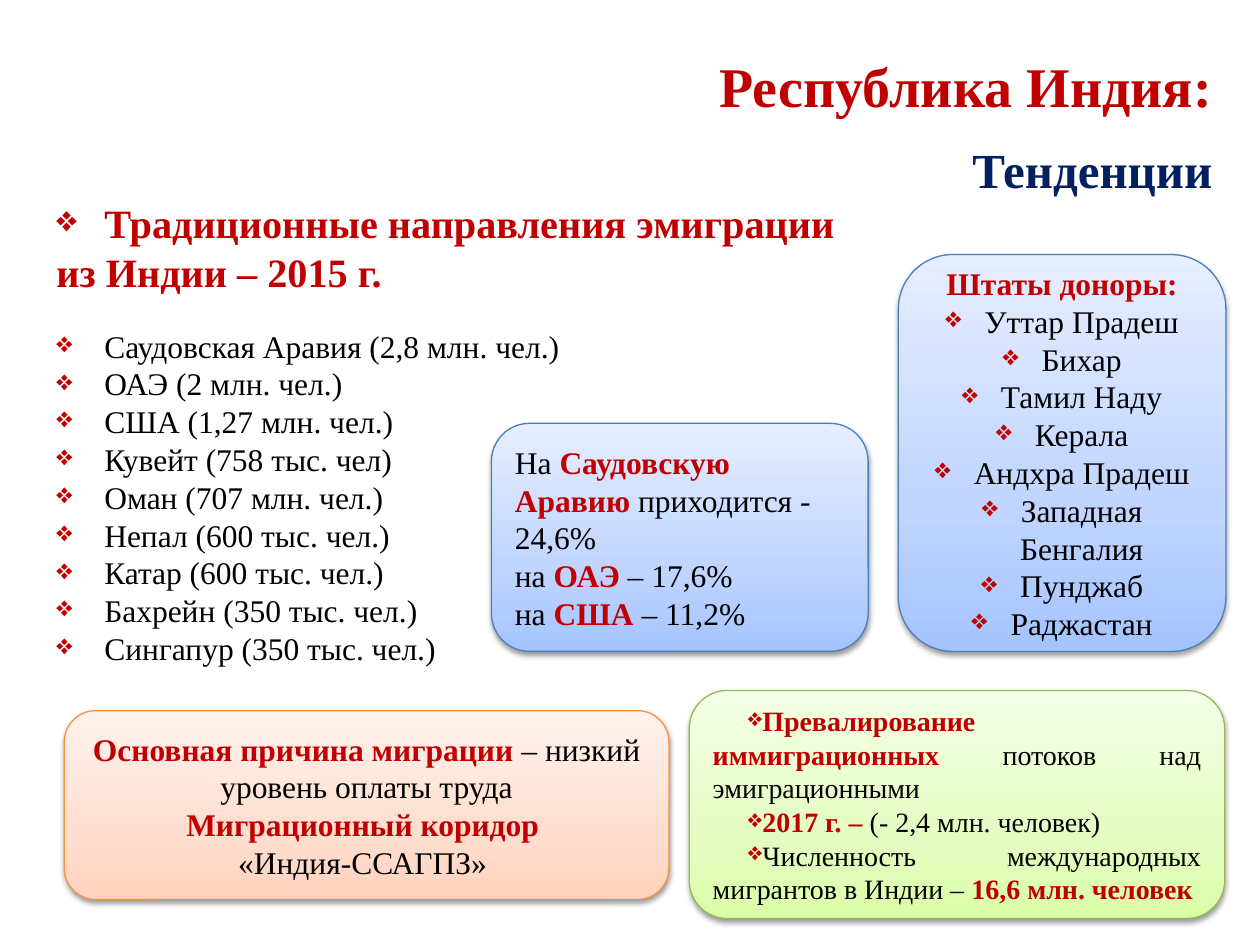
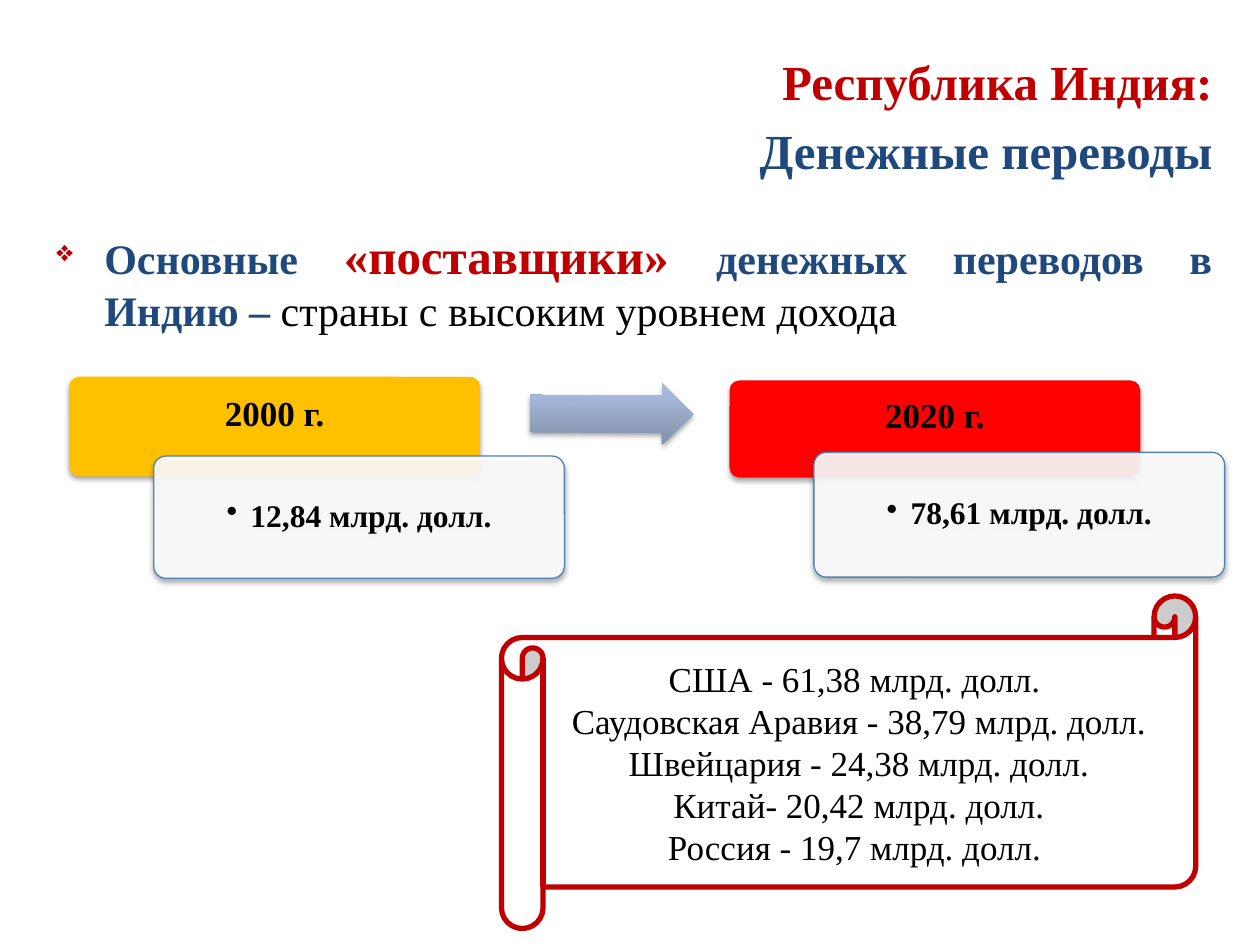
"""Build two slides on migration trends and remittances of India."""
from lxml import etree
from pptx import Presentation
from pptx import util as u
from pptx.dml.color import RGBColor
from pptx.enum import shapes, text
from pptx.oxml import ns

FONT = "Times New Roman"
COLORS = {
    "accent": "C00000", "navy": "002060", "blue": "1F497D", "black": "000000",
    "white": "FFFFFF", "amber": "FFC000", "red": "FF0000", "edge": "4F81BD",
}
CARDS = {
    "blue": ([(0, "A4C4FF"), (35, "BFD4FF"), (100, "E6EEFF")], "4B7EBC"),
    "orange": ([(0, "FFD2BD"), (35, "FFDED0"), (100, "FFF2ED")], "F69240"),
    "green": ([(0, "DAFDA7"), (35, "E4FCC2"), (100, "F5FFE7")], "98B955"),
}
ARROW_STOPS = [(0, "818FA8"), (80, "A7B9DA"), (100, "A7BADC")]
LEFT, CENTER = text.PP_ALIGN.LEFT, text.PP_ALIGN.CENTER
RIGHT, JUSTIFY = text.PP_ALIGN.RIGHT, text.PP_ALIGN.JUSTIFY
SHAPE = shapes.MSO_SHAPE


def add_xml(parent, tag, **attrs):
    return etree.SubElement(parent, ns.qn(tag), {k: str(v) for k, v in attrs.items()})


def marked(line):
    """Split a line at asterisks into plain and accented bold runs."""
    return [(part, "accent" if i % 2 else "black", bool(i % 2), None)
            for i, part in enumerate(line.split("*")) if part]


class Deck:
    """Holds the style and the current slide."""

    def __init__(self):
        self.prs = Presentation()
        self.prs.slide_width, self.prs.slide_height = u.Inches(10), u.Inches(7.5)
        self.s = None

    def slide(self):
        self.s = self.prs.slides.add_slide(self.prs.slide_layouts[6])

    def style(self, font, color, bold, size):
        font.color.rgb = RGBColor.from_string(COLORS[color])
        font.bold = bold
        if size:
            font.size = u.Pt(size)

    def bullet(self, p, indent, pct):
        pPr = p._p.get_or_add_pPr()
        margin, first = indent
        pPr.set("marL", str(u.Inches(margin)))
        pPr.set("indent", str(u.Inches(first)))
        if pct:
            clr = add_xml(pPr, "a:buClr")
            add_xml(clr, "a:srgbClr", val=COLORS["accent"])
            add_xml(pPr, "a:buSzPct", val=pct * 1000)
        add_xml(pPr, "a:buChar", char="❖" if pct else "•")

    def para(self, tf, runs, size, align=LEFT, indent=None, pct=90, before=0, spacing=None):
        p = tf.paragraphs[0]
        if p.runs:
            p = tf.add_paragraph()
        p.alignment = align
        p.space_before = u.Pt(before)
        if spacing:
            p.line_spacing = spacing
        if indent:
            self.bullet(p, indent, pct)
        p.font.name, p.font.size = FONT, u.Pt(size)
        for words, *look in runs:
            r = p.add_run()
            r.text = words
            self.style(p.font if len(runs) == 1 else r.font, *look)

    def lines(self, tf, lines, size, **kw):
        for line in lines:
            self.para(tf, marked(line), size, **kw)

    def body(self, height):
        tf = self.s.shapes.add_textbox(
            u.Inches(0.35), u.Inches(0.36), u.Inches(9.37), u.Inches(height)).text_frame
        tf.word_wrap = True
        return tf

    def title(self, tf, heading, size, subject, color, before):
        self.para(tf, [(heading, "accent", True, None)], size, RIGHT)
        self.para(tf, [(subject, color, True, None)], 28, RIGHT, before=before)

    def gradient(self, sp, stops):
        sp.fill.gradient()
        sp.fill.gradient_angle = 90
        gs_list = sp._element.spPr.find(".//" + ns.qn("a:gsLst"))
        gs_list.clear()
        for pos, color in stops:
            gs = add_xml(gs_list, "a:gs", pos=pos * 1000)
            add_xml(gs, "a:srgbClr", val=color)

    def shadow(self, sp, alpha, dist):
        effects = sp._element.spPr.find(ns.qn("a:effectLst"))
        outer = add_xml(effects, "a:outerShdw", blurRad=u.Pt(3.1), dist=u.Pt(dist),
                        dir=5400000, rotWithShape=0)
        clr = add_xml(outer, "a:srgbClr", val=COLORS["black"])
        add_xml(clr, "a:alpha", val=alpha * 1000)

    def shape(self, kind, at, fill, line=None, width=0.75, opacity=None):
        sp = self.s.shapes.add_shape(kind, *map(u.Inches, at))
        sp.shadow.inherit = False
        if isinstance(fill, list):
            self.gradient(sp, fill)
        else:
            sp.fill.solid()
            sp.fill.fore_color.rgb = RGBColor.from_string(fill)
        if opacity:
            clr = sp._element.spPr.find(ns.qn("a:solidFill"))[0]
            add_xml(clr, "a:alpha", val=opacity * 1000)
        if line:
            sp.line.color.rgb = RGBColor.from_string(line)
            sp.line.width = u.Pt(width)
        else:
            sp.line.fill.background()
        sp.text_frame.word_wrap = True
        sp.text_frame.vertical_anchor = text.MSO_ANCHOR.MIDDLE
        return sp

    def card(self, at, palette):
        sp = self.shape(SHAPE.ROUNDED_RECTANGLE, at, *CARDS[palette])
        self.shadow(sp, 38, 1.6)
        return sp.text_frame

    def panel(self, at, words, size, fill, line=None, opacity=None, indent=None, lift=0):
        sp = self.shape(SHAPE.ROUNDED_RECTANGLE, at, fill, line, opacity=opacity)
        sp.adjustments[0] = 0.1
        self.shadow(sp, 35, 1.8)
        tf = sp.text_frame
        tf.margin_top, tf.margin_bottom = u.Inches(0.05), u.Inches(0.05 + lift)
        self.para(tf, [(words, "black", True, None)], size, CENTER, indent, pct=None,
                  spacing=0.9)

    def year(self, left, top, height, year, color, sum_top, sum_height, amount):
        self.panel((left, top, 3.26, height), year, 20, COLORS[color], lift=0.18)
        self.panel((left + 0.67, sum_top, 3.26, sum_height), amount, 18, COLORS["white"],
                   COLORS["edge"], opacity=90, indent=(0.19, -0.19))


def trends(d):
    d.slide()
    hang = (0.38, -0.38)
    tf = d.body(6.93)
    d.title(tf, "Республика Индия:", 32, "Тенденции", "navy", 12)
    d.lines(tf, ["*Традиционные направления эмиграции*"], 23, indent=hang)
    d.lines(tf, ["*из Индии – 2015 г.*"], 23)
    countries = ["Саудовская Аравия (2,8 млн. чел.)", "ОАЭ (2 млн. чел.)",
                 "США (1,27 млн. чел.)", "Кувейт (758 тыс. чел)",
                 "Оман (707 млн. чел.)", "Непал (600 тыс. чел.)",
                 "Катар (600 тыс. чел.)", "Бахрейн (350 тыс. чел.)",
                 "Сингапур (350 тыс. чел.)"]
    d.lines(tf, countries[:1], 18, indent=hang, before=18)
    d.lines(tf, countries[1:], 18, indent=hang)

    shares = d.card((3.9, 3.36, 2.99, 1.81), "blue")
    d.lines(shares, ["На *Саудовскую Аравию *приходится - 24,6%",
                     "на *ОАЭ* – 17,6%", "на *США* – 11,2%"], 18)

    donors = d.card((7.13, 2.02, 2.6, 3.15), "blue")
    d.lines(donors, ["*Штаты доноры:*"], 18, align=CENTER)
    d.lines(donors, ["Уттар Прадеш", "Бихар", "Тамил Наду", "Керала", "Андхра Прадеш",
                     "Западная Бенгалия", "Пунджаб", "Раджастан"], 18,
            align=CENTER, indent=(0.31, -0.31))

    cause = d.card((0.51, 5.64, 4.8, 1.5), "orange")
    d.lines(cause, ["*Основная причина миграции *– низкий уровень оплаты труда",
                    "*Миграционный коридор *", "«Индия-ССАГПЗ» "], 18, align=CENTER)

    balance = d.card((5.47, 5.48, 4.25, 1.81), "green")
    d.lines(balance, ["*Превалирование иммиграционных *потоков над эмиграционными",
                      "*2017 г. – *(- 2,4 млн. человек)",
                      "Численность международных мигрантов в Индии – *16,6 млн. человек*"],
            16, align=JUSTIFY, indent=(0, 0.28))


def remittances(d):
    d.slide()
    tf = d.body(6.85)
    d.title(tf, "Республика Индия:", 28, "Денежные переводы", "blue", 5.6)
    d.para(tf, [("Основные ", "blue", True, None),
                ("«поставщики» ", "accent", True, 28),
                ("денежных переводов в Индию – ", "blue", True, None),
                ("страны с высоким уровнем дохода", "black", False, None)],
           24, JUSTIFY, (0.38, -0.38), pct=70, before=26.4)

    d.year(0.55, 2.99, 0.79, "2000 г.", "amber", 3.62, 0.97, "12,84 млрд. долл.")
    arrow = d.shape(SHAPE.RIGHT_ARROW, (4.21, 3.04, 1.29, 0.49), ARROW_STOPS)
    arrow.adjustments[0] = 0.6
    arrow.rotation = 0.3
    d.shadow(arrow, 35, 1.8)
    d.year(5.79, 3.02, 0.77, "2020 г.", "red", 3.59, 0.99, "78,61 млрд. долл.")

    scroll = d.shape(SHAPE.HORIZONTAL_SCROLL, (3.98, 4.73, 5.51, 2.64), COLORS["white"],
                     COLORS["accent"], 3)
    d.lines(scroll.text_frame, ["США - 61,38 млрд. долл. ",
                                "Саудовская Аравия - 38,79 млрд. долл.",
                                "Швейцария - 24,38 млрд. долл.",
                                "Китай- 20,42 млрд. долл.",
                                "Россия - 19,7 млрд. долл. "], 20, align=CENTER)


def main():
    d = Deck()
    trends(d)
    remittances(d)
    d.prs.save("out.pptx")


if __name__ == "__main__":
    main()
